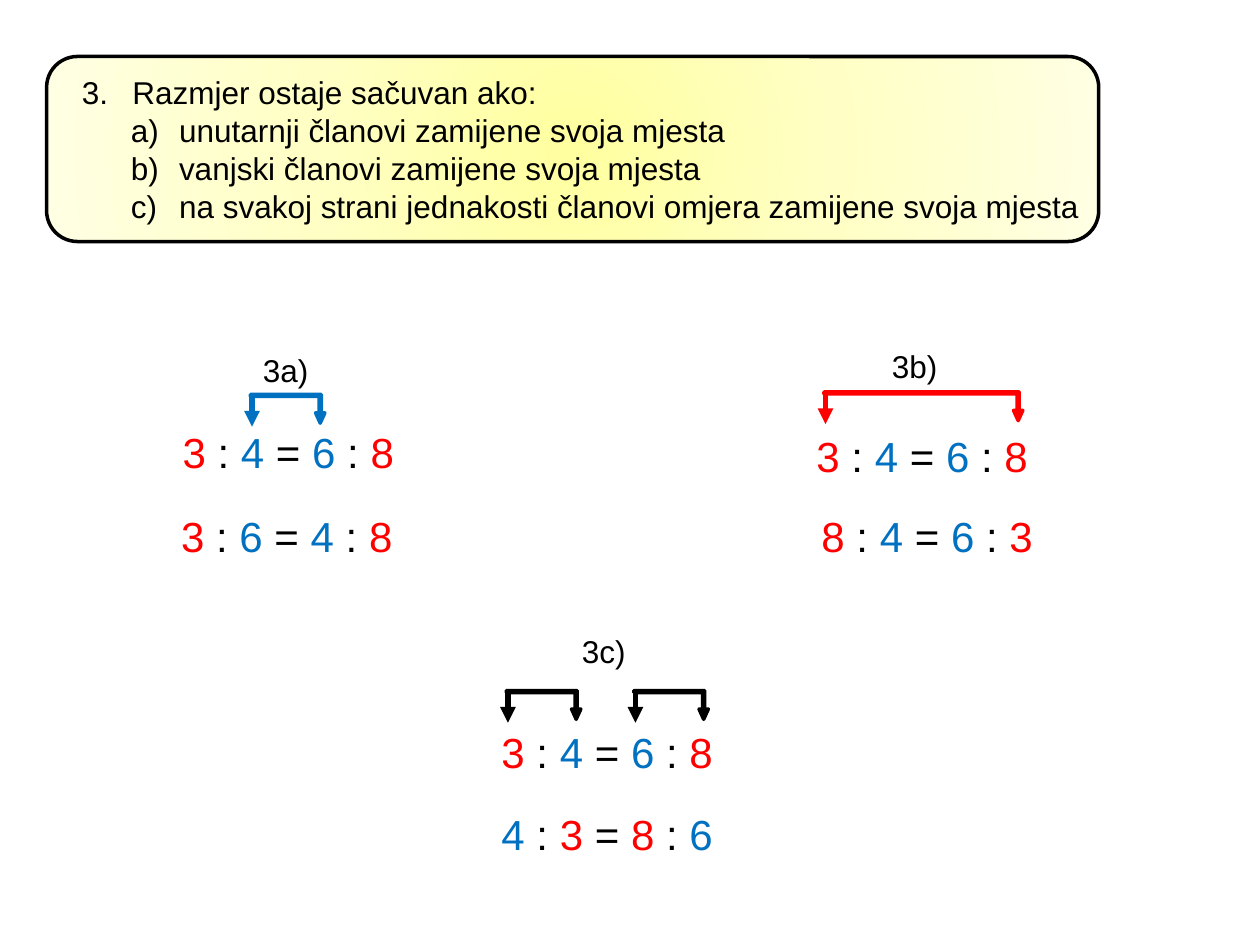
from dataclasses import dataclass

from lxml.etree import SubElement
from pptx import Presentation
from pptx.dml.color import RGBColor
from pptx.enum.shapes import MSO_CONNECTOR, MSO_SHAPE
from pptx.oxml import parse_xml
from pptx.oxml.ns import nsdecls, qn
from pptx.util import Cm, Pt

COLORS = {"red": "FF0000", "blue": "0070C0", "black": "000000"}
DIGITS = {"3": "red", "8": "red", "4": "blue", "6": "blue"}
GRADIENT = {0: "FFFFA0", 50: "FFFFC5", 100: "FFFFE3"}


@dataclass
class Label:
    text: str
    x: float
    y: float


@dataclass
class Equation:
    text: str
    x: float
    y: float


@dataclass
class Bracket:
    x: float
    y: float
    width: float
    color: str


@dataclass
class Item:
    text: str
    level: int
    margin: float
    hanging: float
    numbering: dict


LETTERS = {"type": "alphaLcParenR"}
ITEMS = [
    Item("Razmjer ostaje sačuvan ako:", 0, 1.02, 1.02,
         {"type": "arabicPeriod", "startAt": "3"}),
    Item("unutarnji članovi zamijene svoja mjesta", 1, 1.96, 0.97, LETTERS),
    Item("vanjski članovi zamijene svoja mjesta", 1, 1.96, 0.97, LETTERS),
    Item("na svakoj strani jednakosti članovi omjera zamijene svoja mjesta",
         1, 1.96, 0.97, LETTERS),
]
EQUATIONS = [
    Equation("3 : 4 = 6 : 8", 3.43, 8.48),
    Equation("3 : 6 = 4 : 8", 3.4, 10.16),
    Equation("3 : 4 = 6 : 8", 16.21, 8.56),
    Equation("8 : 4 = 6 : 3", 16.31, 10.16),
    Equation("3 : 4 = 6 : 8", 9.86, 14.53),
    Equation("4 : 3 = 8 : 6", 9.86, 16.18),
]
BRACKETS = [
    Bracket(5.05, 7.95, 1.5, "blue"),
    Bracket(16.61, 7.9, 4.01, "red"),
    Bracket(10.21, 13.92, 1.5, "black"),
    Bracket(12.78, 13.92, 1.5, "black"),
]
LABELS = [
    Label("3a)", 5.05, 6.96),
    Label("3b)", 17.73, 6.88),
    Label("3c)", 11.48, 12.62),
]


def rgb(name: str) -> RGBColor:
    return RGBColor.from_string(COLORS[name])


def add_run(p, text: str, size: int, color: str = "black") -> None:
    r = p.add_run()
    r.text = text
    for key, value in {"name": "Arial", "size": Pt(size)}.items():
        setattr(r.font, key, value)
    r.font.color.rgb = rgb(color)


def add_text(s, x: float, y: float, w: float, h: float, wrap: bool = True):
    tf = s.shapes.add_textbox(Cm(x), Cm(y), Cm(w), Cm(h)).text_frame
    tf.word_wrap = wrap
    return tf


def draw_panel(s) -> None:
    sp = s.shapes.add_shape(MSO_SHAPE.ROUNDED_RECTANGLE,
                            Cm(0.94), Cm(1.14), Cm(21.21), Cm(3.73))
    sp.shadow.inherit = False
    stops = "".join(f'<a:gs pos="{pos * 1000}"><a:srgbClr val="{c}"/></a:gs>'
                    for pos, c in GRADIENT.items())
    grad = parse_xml(
        f'<a:gradFill {nsdecls("a")} rotWithShape="1"><a:gsLst>{stops}</a:gsLst>'
        '<a:path path="circle"><a:fillToRect l="50000" t="50000" r="50000" b="50000"/>'
        '</a:path></a:gradFill>')
    sp._element.spPr.find(qn("a:prstGeom")).addnext(grad)
    sp.line.color.rgb = rgb("black")
    sp.line.width = Pt(2)


def draw_rules(s, items: list[Item]) -> None:
    tf = add_text(s, 1.4, 1.35, 21.62, 3.33)
    for i, item in enumerate(items):
        p = tf.paragraphs[0] if i == 0 else tf.add_paragraph()
        p.level = item.level
        pPr = p._p.get_or_add_pPr()
        pPr.set("marL", str(Cm(item.margin)))
        pPr.set("indent", str(-Cm(item.hanging)))
        SubElement(pPr, qn("a:buFont"), typeface="+mj-lt")
        SubElement(pPr, qn("a:buAutoNum"), item.numbering)
        add_run(p, item.text, 18)


def draw_equation(s, eq: Equation) -> None:
    p = add_text(s, eq.x, eq.y, 4.8, 1.29, wrap=False).paragraphs[0]
    for token in eq.text.split():
        if token in DIGITS:
            add_run(p, token, 24, DIGITS[token])
        else:
            add_run(p, f" {token} ", 24)


def draw_bracket(s, b: Bracket) -> None:
    sp = s.shapes.add_shape(MSO_SHAPE.BENT_UP_ARROW,
                            Cm(b.x), Cm(b.y), Cm(b.width), Cm(0.58))
    for i, value in enumerate((0.071, 0.161, 0.357)):
        sp.adjustments[i] = value
    sp.rotation = 180
    sp._element.spPr.find(qn("a:xfrm")).set("flipH", "1")
    sp.shadow.inherit = False
    sp.fill.solid()
    sp.fill.fore_color.rgb = rgb(b.color)
    sp.line.color.rgb = rgb(b.color)
    sp.line.width = Pt(2)

    x, y = b.x + 0.03, b.y + 0.04
    arrow = s.shapes.add_connector(MSO_CONNECTOR.STRAIGHT,
                                   Cm(x), Cm(y), Cm(x), Cm(y + 0.61))
    arrow.line.color.rgb = rgb(b.color)
    arrow.line.width = Pt(3)
    SubElement(arrow.line._get_or_add_ln(), qn("a:tailEnd"), type="triangle")
    SubElement(arrow._element.spPr, qn("a:effectLst"))


def draw_label(s, label: Label) -> None:
    tf = add_text(s, label.x, label.y, 1.45, 1.02)
    add_run(tf.paragraphs[0], label.text, 18)


def main() -> None:
    prs = Presentation()
    prs.slide_width, prs.slide_height = Cm(25.4), Cm(19.05)
    s = prs.slides.add_slide(prs.slide_layouts[6])
    draw_panel(s)
    draw_rules(s, ITEMS)
    for eq in EQUATIONS:
        draw_equation(s, eq)
    for bracket in BRACKETS:
        draw_bracket(s, bracket)
    for label in LABELS:
        draw_label(s, label)
    prs.save("out.pptx")


if __name__ == "__main__":
    main()
